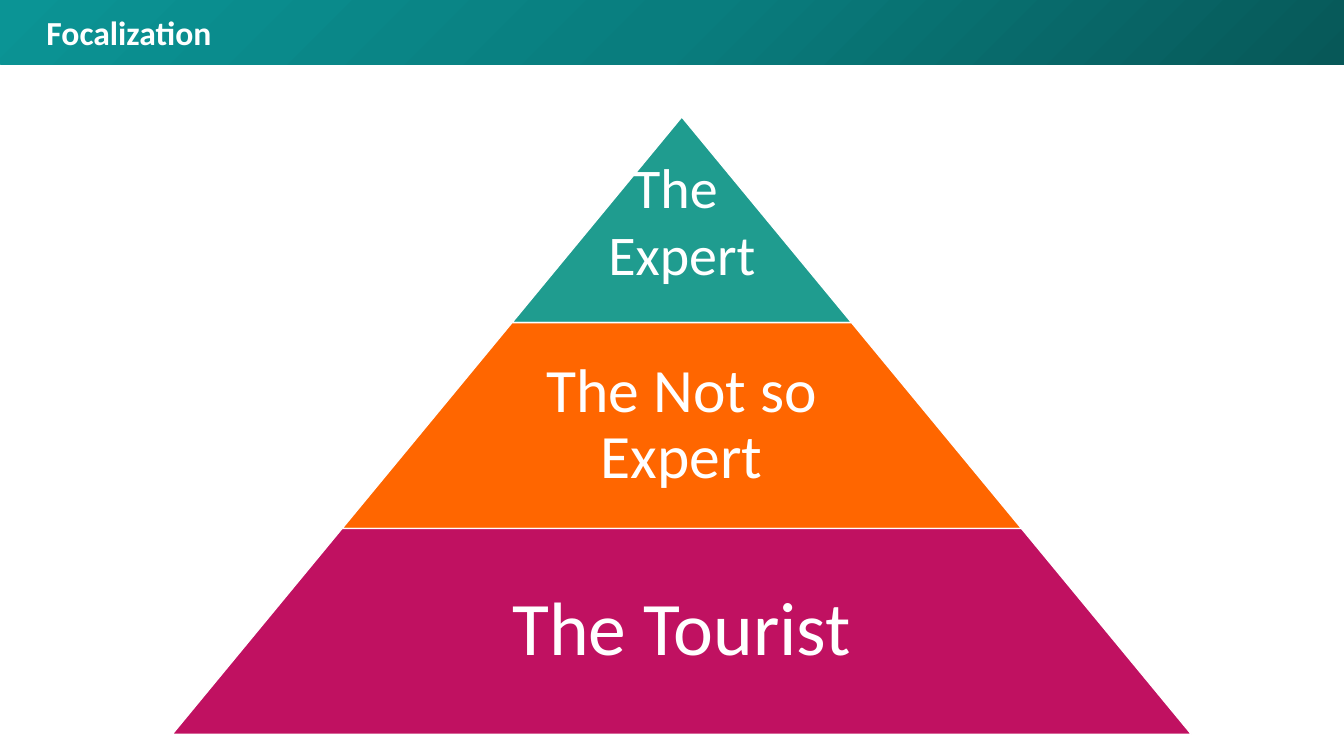
"""Builds the Focalization slide: a title bar above a three-tier audience pyramid."""
import lxml.etree
import pptx
import pptx.dml.color
import pptx.enum.shapes
import pptx.enum.text
import pptx.oxml
import pptx.oxml.ns
import pptx.util

Pt = pptx.util.Pt
PP_ALIGN = pptx.enum.text.PP_ALIGN
MIDDLE = pptx.enum.text.MSO_ANCHOR.MIDDLE
SHAPE = pptx.enum.shapes.MSO_SHAPE


def color(hex_string):
    return pptx.dml.color.RGBColor.from_string(hex_string)


def style_text(paragraph, size, alignment, bold=False):
    paragraph.alignment = alignment
    paragraph.font.name = "Calibri"
    paragraph.font.size = Pt(size)
    paragraph.font.bold = bold
    paragraph.font.color.rgb = color("FFFFFF")


presentation = pptx.Presentation()
presentation.slide_width = Pt(960)
presentation.slide_height = Pt(540)
slide = presentation.slides.add_slide(presentation.slide_layouts[5])

title = slide.shapes.title
title.left, title.top, title.width, title.height = Pt(26), Pt(5), Pt(884), Pt(36)
title.text_frame.text = "Focalization"
title.text_frame.vertical_anchor = MIDDLE
title.text_frame.auto_size = pptx.enum.text.MSO_AUTO_SIZE.SHAPE_TO_FIT_TEXT
style_text(title.text_frame.paragraphs[0], 24, PP_ALIGN.LEFT, bold=True)

header = slide.shapes.add_shape(SHAPE.RECTANGLE, 0, 0, Pt(960), Pt(46))
header.shadow.inherit = False
header.line.fill.background()
header.fill.gradient()
gradient = header.element.spPr.find(pptx.oxml.ns.qn("a:gradFill"))
stops = [(0, "075858"), (50, "097D7E"), (100, "0B9495")]
stop_xml = "".join(
    f'<a:gs pos="{position * 1000}"><a:srgbClr val="{shade}"/></a:gs>'
    for position, shade in stops
)
radial = pptx.oxml.parse_xml(
    f'<a:gradFill {pptx.oxml.ns.nsdecls("a")} rotWithShape="1"><a:gsLst>{stop_xml}</a:gsLst>'
    '<a:path path="circle"><a:fillToRect l="100000" t="100000"/></a:path></a:gradFill>'
)
gradient.getparent().replace(gradient, radial)
title.element.addprevious(header.element)

center, apex, tier_height, half_step = 487, 83.5, 147, 121.33
tiers = [
    (["The ", "Expert"], "1F9C8F", 40, 1, 1, 4.5),
    (["The Not so Expert"], "FF6600", 44, 0.65, 0.9, 4.5),
    (["The Tourist"], "C01161", 54, 0.65, 0.9, 5),
]
pyramid = slide.shapes.add_group_shape()
for row, (lines, fill, size, text_share, spacing, inset) in enumerate(tiers):
    top = apex + row * tier_height
    width = 2 * half_step * (row + 1)
    tier = pyramid.shapes.add_shape(
        SHAPE.TRAPEZOID, Pt(center - width / 2), Pt(top), Pt(width), Pt(tier_height)
    )
    tier.adjustments[0] = half_step / tier_height
    tier.shadow.inherit = False
    tier.fill.solid()
    tier.fill.fore_color.rgb = color(fill)
    tier.line.color.rgb = color("FFFFFF")
    tier.line.width = Pt(1)

    text_width = width * text_share
    label = pyramid.shapes.add_textbox(
        Pt(center - text_width / 2), Pt(top), Pt(text_width), Pt(tier_height)
    )
    frame = label.text_frame
    frame.word_wrap = True
    frame.vertical_anchor = MIDDLE
    frame.margin_left = frame.margin_right = Pt(inset)
    frame.margin_top = frame.margin_bottom = Pt(inset)
    frame.text = "\n".join(lines)
    for paragraph in frame.paragraphs:
        paragraph.line_spacing = spacing
        style_text(paragraph, size, PP_ALIGN.CENTER)

presentation.save("out.pptx")
